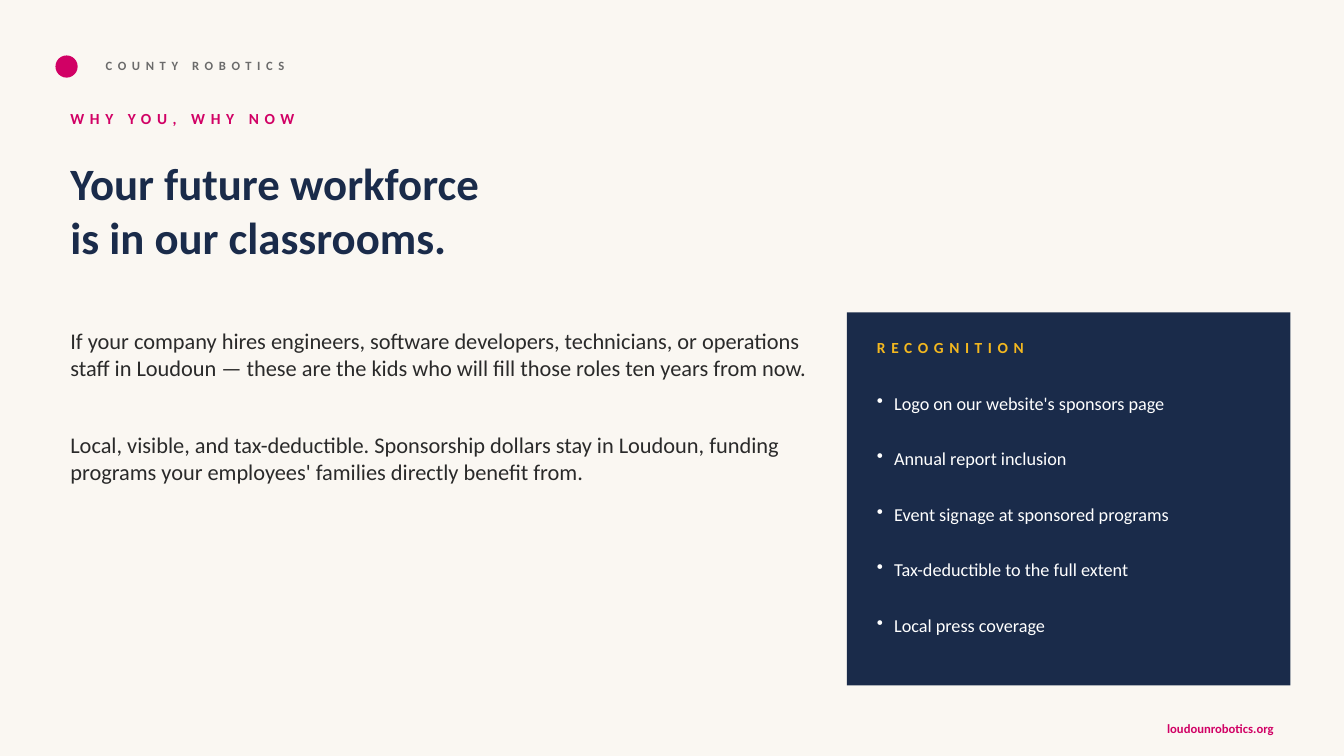
import pptx
import pptx.util
import pptx.dml.color
import pptx.enum.shapes
import pptx.enum.text
import pptx.oxml.ns
import lxml.etree

Inches = pptx.util.Inches
Pt = pptx.util.Pt
RGBColor = pptx.dml.color.RGBColor
Shape = pptx.enum.shapes.MSO_SHAPE
Anchor = pptx.enum.text.MSO_ANCHOR
Align = pptx.enum.text.PP_ALIGN

CREAM = RGBColor(0xFA, 0xF7, 0xF2)
PINK = RGBColor(0xD1, 0x01, 0x65)
NAVY = RGBColor(0x1A, 0x2B, 0x4A)
GOLD = RGBColor(0xF4, 0xB8, 0x1F)
GRAY = RGBColor(0x6B, 0x6B, 0x6B)
INK = RGBColor(0x2A, 0x2A, 0x2A)
WHITE = RGBColor(0xFF, 0xFF, 0xFF)

PERKS = [
    "Logo on our website's sponsors page",
    "Annual report inclusion",
    "Event signage at sponsored programs",
    "Tax-deductible to the full extent",
    "Local press coverage",
]


class Painter:
    font = "Calibri"

    def __init__(self, slide):
        self.slide = slide
        back = slide.background.fill
        back.solid()
        back.fore_color.rgb = CREAM

    def shape(self, kind, box, color):
        item = self.slide.shapes.add_shape(kind, *map(Inches, box))
        item.shadow.inherit = False
        item.fill.solid()
        item.fill.fore_color.rgb = color
        item.line.fill.background()

    def text(self, box, words, size, color, bold=False, track=0, gap=0,
             anchor=Anchor.MIDDLE, align=Align.LEFT, bullet=False):
        frame = self.slide.shapes.add_textbox(*map(Inches, box)).text_frame
        frame.word_wrap = True
        frame.vertical_anchor = anchor
        frame.text = words
        for para in frame.paragraphs:
            para.alignment = align
            if bullet:
                self.bullet(para)
            if gap and para is not frame.paragraphs[-1]:
                para.space_after = Pt(gap)
            for run in para.runs:
                run.font.name = self.font
                run.font.size = Pt(size)
                run.font.bold = bold
                run.font.color.rgb = color
                if track:
                    run.font._element.set("spc", str(track * 100))

    def bullet(self, para):
        props = para._p.get_or_add_pPr()
        props.set("marL", str(Inches(0.17)))
        props.set("indent", str(-Inches(0.17)))
        mark = lxml.etree.SubElement(props, pptx.oxml.ns.qn("a:buChar"))
        mark.set("char", "•")

    def label(self, box, words, size, color):
        self.text(box, words, size, color, bold=True, track=4)


def main():
    deck = pptx.Presentation()
    deck.slide_width = Inches(13.33)
    deck.slide_height = Inches(7.5)
    page = Painter(deck.slides.add_slide(deck.slide_layouts[6]))

    page.shape(Shape.OVAL, (0.55, 0.55, 0.22, 0.22), PINK)
    page.label((0.95, 0.5, 5, 0.3), "COUNTY ROBOTICS", 9, GRAY)
    page.label((0.6, 1, 8, 0.35), "WHY YOU, WHY NOW", 11, PINK)
    page.text((0.6, 1.5, 12.13, 1.15),
              "Your future workforce\nis in our classrooms.",
              32, NAVY, bold=True, anchor=Anchor.TOP)
    page.text((0.6, 3.2, 7.5, 1.5),
              "If your company hires engineers, software developers, "
              "technicians, or operations staff in Loudoun — these are "
              "the kids who will fill those roles ten years from now.\n"
              "Local, visible, and tax-deductible. Sponsorship dollars "
              "stay in Loudoun, funding programs your employees' families "
              "directly benefit from.",
              16, INK, gap=35.5, anchor=Anchor.TOP)

    page.shape(Shape.RECTANGLE, (8.4, 3.1, 4.4, 3.7), NAVY)
    page.label((8.6, 3.3, 4, 0.3), "RECOGNITION", 11, GOLD)
    for row, perk in enumerate(PERKS):
        page.text((8.6, 3.75 + 0.55 * row, 4, 0.5), perk, 13, WHITE,
                  bullet=True)

    page.text((10.33, 7.08, 2.4, 0.3), "loudounrobotics.org", 9, PINK,
              bold=True, align=Align.RIGHT)
    deck.save("out.pptx")


if __name__ == "__main__":
    main()
